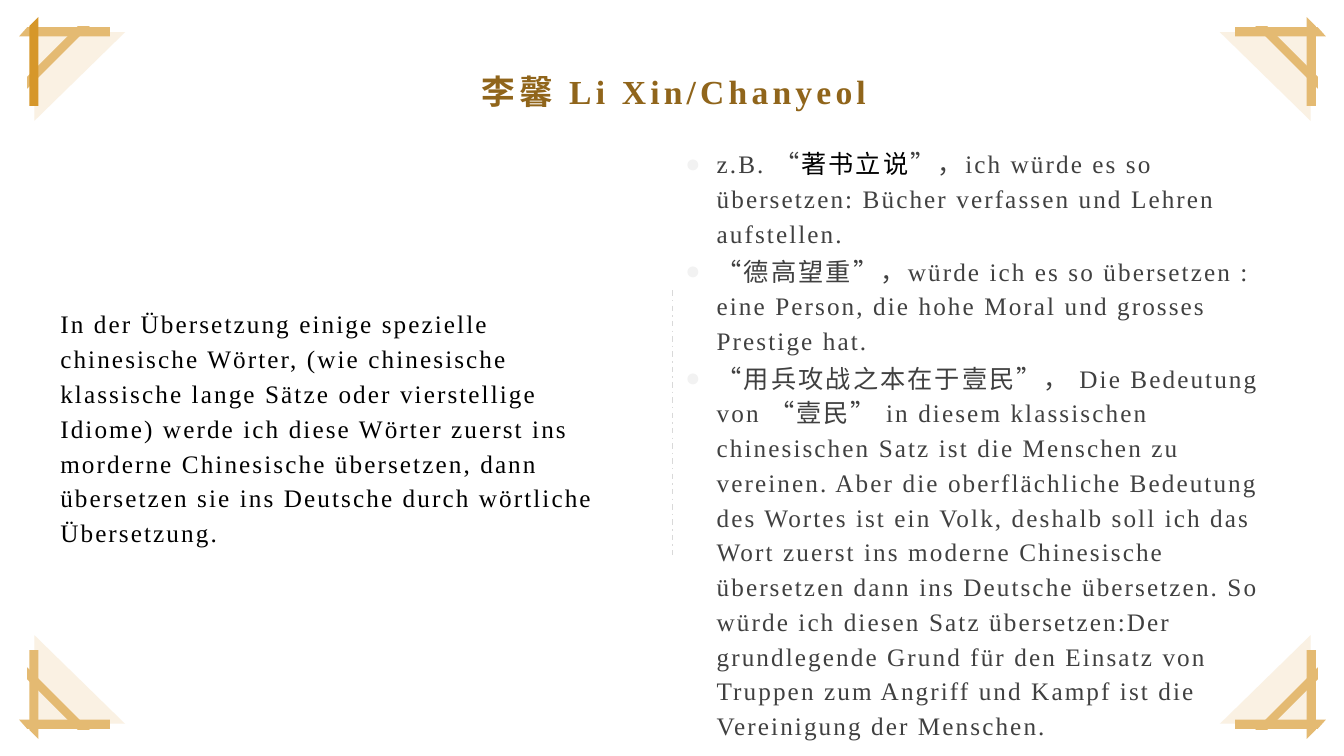
import pptx
import pptx.util
import pptx.dml.color
import pptx.enum.dml
import pptx.enum.shapes
import pptx.enum.text
import pptx.oxml
import pptx.oxml.ns
from dataclasses import dataclass

Inches = pptx.util.Inches
Pt = pptx.util.Pt
ALIGN = pptx.enum.text.PP_ALIGN
ANCHOR = pptx.enum.text.MSO_ANCHOR


@dataclass(frozen=True)
class Theme:
    font: str = "Times New Roman"
    title_size: int = 24
    body_size: int = 18
    title: str = "90651B"
    ink: str = "000000"
    grey: str = "404040"
    bullet: str = "F2F2F2"
    divider: str = "D9D9D9"
    pale: str = "FAF1E3"
    gold: str = "E4BA72"
    dark_gold: str = "D6972A"


THEME = Theme()
WIDTH, HEIGHT = 13.34, 7.5
DIAGONAL = [(0.27, 0.76), (0.77, 0.26), (0.89, 0.26), (0.27, 0.88)]
TOP_BAR = [(0.27, 0.27), (1.09, 0.27), (1.09, 0.36), (0.19, 0.36)]
SIDE_BAR = [(0.38, 0.17), (0.38, 1.05), (0.29, 1.05), (0.29, 0.26)]

TITLE = "李馨 Li Xin/Chanyeol"
METHOD = (
    "In der Übersetzung einige spezielle chinesische Wörter, (wie chinesische "
    "klassische lange Sätze oder vierstellige Idiome) werde ich diese Wörter zuerst "
    "ins morderne Chinesische übersetzen, dann übersetzen sie ins Deutsche durch "
    "wörtliche Übersetzung."
)
EXAMPLES = [
    [
        ("z.B. “", THEME.grey),
        ("著书立说", THEME.ink),
        ("”，ich würde es so übersetzen: Bücher verfassen und Lehren aufstellen.", THEME.grey),
    ],
    [(
        "“德高望重”，würde ich es so übersetzen : eine Person, die hohe Moral und "
        "grosses Prestige hat.", THEME.grey,
    )],
    [(
        "“用兵攻战之本在于壹民”， Die Bedeutung von “壹民” in diesem klassischen "
        "chinesischen Satz ist die Menschen zu vereinen. Aber die oberflächliche "
        "Bedeutung des Wortes ist ein Volk, deshalb soll ich das Wort zuerst ins "
        "moderne Chinesische übersetzen dann ins Deutsche übersetzen. So würde ich "
        "diesen Satz übersetzen:Der grundlegende Grund für den Einsatz von Truppen "
        "zum Angriff und Kampf ist die Vereinigung der Menschen.", THEME.grey,
    )],
]
TITLE_FRAME = {"margin_left": Inches(0.11), "margin_right": Inches(0.07),
               "margin_top": Inches(0.04), "margin_bottom": Inches(0.04)}
BODY_FRAME = {"vertical_anchor": ANCHOR.MIDDLE}
BODY_PARAGRAPH = {"line_spacing": 1.15, "space_after": Pt(2)}
TITLE_FONT = {"name": THEME.font, "size": Pt(THEME.title_size), "bold": True}
BODY_FONT = {"name": THEME.font, "size": Pt(THEME.body_size)}


def rgb(value):
    return pptx.dml.color.RGBColor.from_string(value)


def apply(target, values):
    for name, value in values.items():
        setattr(target, name, value)


def paint(sp, color):
    sp.shadow.inherit = False
    sp.fill.solid()
    sp.fill.fore_color.rgb = rgb(color)
    sp.line.fill.background()


def add_bullet(p):
    ppr = p._p.get_or_add_pPr()
    indent = Inches(0.31)
    ppr.set("marL", str(indent))
    ppr.set("indent", str(-indent))
    ns = pptx.oxml.ns.nsdecls("a")
    for xml in (
        f'<a:buClr {ns}><a:srgbClr val="{THEME.bullet}"/></a:buClr>',
        f'<a:buFont {ns} typeface="Arial"/>',
        f'<a:buChar {ns} char="●"/>',
    ):
        ppr.append(pptx.oxml.parse_xml(xml))


def add_text(s, box, paragraphs, frame, paragraph, font, spacing, bullets=False):
    tf = s.shapes.add_textbox(*map(Inches, box)).text_frame
    tf.word_wrap = True
    apply(tf, frame)
    for i, runs in enumerate(paragraphs):
        p = tf.add_paragraph() if i else tf.paragraphs[0]
        apply(p, paragraph)
        if bullets:
            add_bullet(p)
        for text, color in runs:
            r = p.add_run()
            r.text = text
            apply(r.font, font)
            r.font.color.rgb = rgb(color)
            r._r.get_or_add_rPr().set("spc", str(int(spacing * 100)))


def add_triangle(s, right, bottom):
    w, h = 0.9, 0.88
    x = WIDTH - 0.34 - w if right else 0.34
    y = HEIGHT - 0.32 - h if bottom else 0.32
    sp = s.shapes.add_shape(pptx.enum.shapes.MSO_SHAPE.RIGHT_TRIANGLE,
                            Inches(x), Inches(y), Inches(w), Inches(h))
    paint(sp, THEME.pale)
    xfrm = sp.element.spPr.get_or_add_xfrm()
    for flip, on in (("flipH", right), ("flipV", not bottom)):
        if on:
            xfrm.set(flip, "1")


def add_frame_corner(s, right, bottom):
    group = s.shapes.add_group_shape()
    side_color = THEME.gold if right or bottom else THEME.dark_gold
    for outline, color in ((DIAGONAL, THEME.gold), (TOP_BAR, THEME.gold), (SIDE_BAR, side_color)):
        points = [(Inches(WIDTH - x if right else x), Inches(HEIGHT - y if bottom else y))
                  for x, y in outline]
        builder = group.shapes.build_freeform(*points[0])
        builder.add_line_segments(points[1:], close=True)
        paint(builder.convert_to_shape(), color)


def add_divider(s, x, top, bottom):
    line = s.shapes.add_connector(pptx.enum.shapes.MSO_CONNECTOR.STRAIGHT,
                                  Inches(x), Inches(top), Inches(x), Inches(bottom))
    line.line.color.rgb = rgb(THEME.divider)
    apply(line.line, {"width": Pt(1), "dash_style": pptx.enum.dml.MSO_LINE.DASH_DOT})
    ns = pptx.oxml.ns.nsdecls("a")
    line.element.spPr.append(pptx.oxml.parse_xml(f"<a:effectLst {ns}/>"))


def main():
    prs = pptx.Presentation()
    apply(prs, {"slide_width": Inches(13.33), "slide_height": Inches(HEIGHT)})
    s = prs.slides.add_slide(prs.slide_layouts[6])
    for bottom in (False, True):
        for right in (False, True):
            add_triangle(s, right, bottom)
            add_frame_corner(s, right, bottom)
    add_text(s, (0.5, 0.66, 12.33, 0.68), [[(TITLE, THEME.title)]],
             TITLE_FRAME, {"alignment": ALIGN.CENTER}, TITLE_FONT, 3)
    add_text(s, (0.5, 1.6, 5.84, 5.25), [[(METHOD, THEME.ink)]],
             BODY_FRAME, BODY_PARAGRAPH, BODY_FONT, 1.5)
    add_divider(s, 6.67, 2.88, 5.51)
    add_text(s, (6.7, 1.64, 6.13, 5.5), EXAMPLES,
             BODY_FRAME, BODY_PARAGRAPH, BODY_FONT, 1.5, bullets=True)
    prs.save("out.pptx")


if __name__ == "__main__":
    main()
